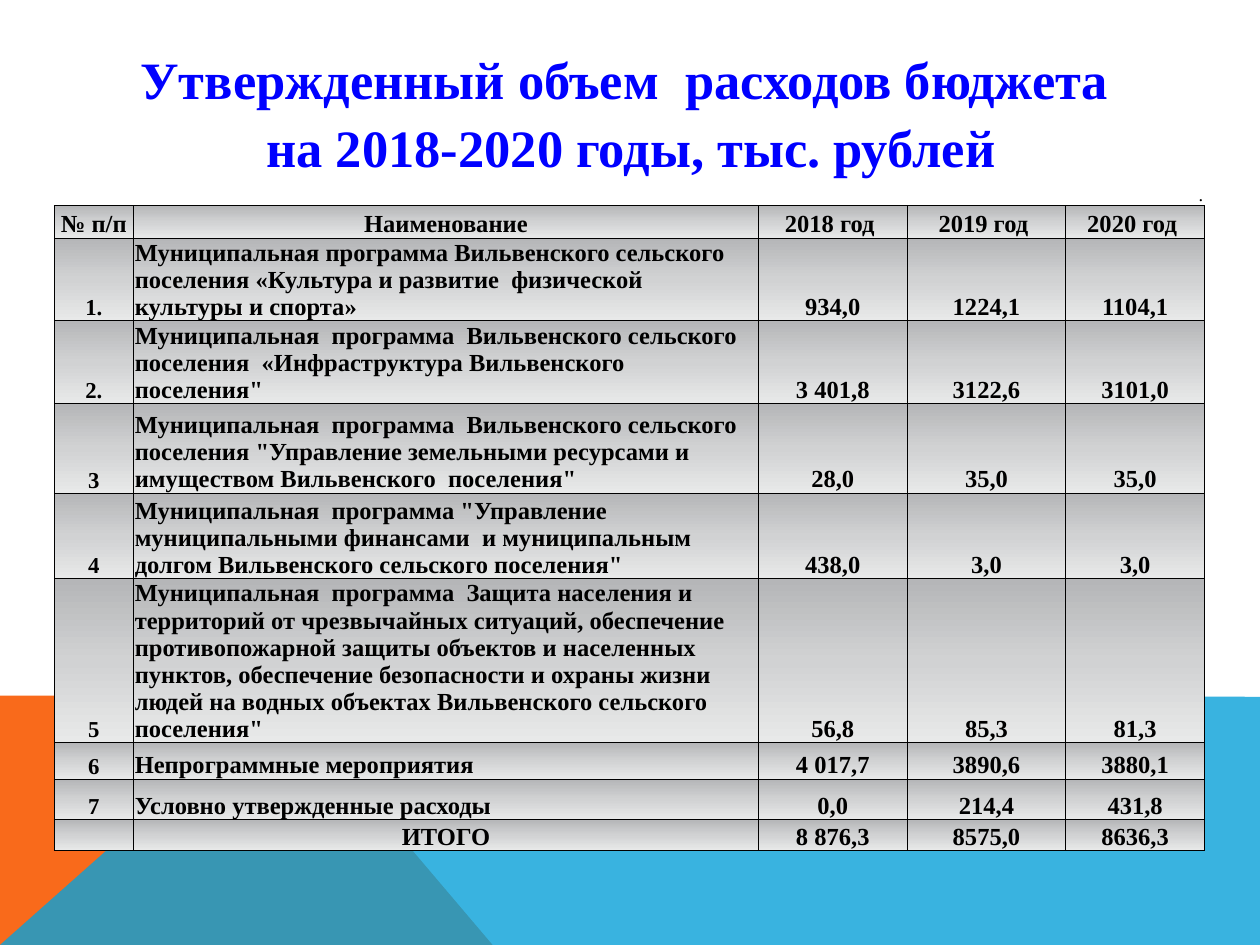
from dataclasses import dataclass

from lxml.etree import SubElement
from pptx import Presentation
from pptx.dml.color import RGBColor
from pptx.enum.text import MSO_ANCHOR, MSO_AUTO_SIZE, PP_ALIGN
from pptx.oxml.ns import qn
from pptx.util import Inches, Pt


@dataclass(frozen=True)
class Theme:
    font: str = "Times New Roman"
    title: str = "0000FF"
    ink: str = "000000"
    orange: str = "F96A1B"
    blue: str = "08A1D9"
    shading: tuple = ((0, "B5B6B8"), (50, "D1D2D3"), (100, "E8E9E9"))
    title_size: float = 30
    body_size: float = 14
    number_size: float = 13
    dot_size: float = 10.5
    border: float = 0.5


THEME = Theme()
COLUMN_WIDTHS = (0.63, 4.96, 1.18, 1.26, 1.1)
ROW_HEIGHTS = (0.17, 0.25, 0.65, 0.66, 0.71, 0.68, 1.3, 0.29, 0.32, 0.24)
HEADER = ("№ п/п", "Наименование", "2018 год ", "2019 год ", "2020 год ")
EXPENSES = (
    ("1.", "Муниципальная программа Вильвенского сельского поселения «Культура и развитие  "
     "физической культуры и спорта»", "934,0", "1224,1", "1104,1"),
    ("2.", "Муниципальная  программа  Вильвенского сельского поселения  «Инфраструктура "
     "Вильвенского  поселения\"", "3 401,8", "3122,6", "3101,0"),
    ("3", "Муниципальная  программа  Вильвенского сельского поселения \"Управление земельными "
     "ресурсами и имуществом Вильвенского  поселения\"", "28,0", "35,0", "35,0"),
    ("4", "Муниципальная  программа \"Управление муниципальными финансами  и муниципальным "
     "долгом Вильвенского сельского поселения\"", "438,0", "3,0", "3,0"),
    ("5", "Муниципальная  программа  Защита населения и территорий от чрезвычайных ситуаций, "
     "обеспечение противопожарной защиты объектов и населенных пунктов, обеспечение "
     "безопасности и охраны жизни людей на водных объектах Вильвенского сельского  поселения\"",
     "56,8", "85,3", "81,3"),
    ("6", "Непрограммные мероприятия", "4 017,7", "3890,6", "3880,1"),
    ("7", "Условно утвержденные расходы", "0,0", "214,4", "431,8"),
)
TOTAL = ("", "ИТОГО", "8 876,3", "8575,0", "8636,3")


def write_text(frame, text, size=THEME.body_size, color=THEME.ink, bold=True,
               align=PP_ALIGN.CENTER, spacing=None):
    frame.text = text
    for paragraph in frame.paragraphs:
        paragraph.alignment = align
        paragraph.line_spacing = spacing
        for run in paragraph.runs:
            run.font.name = THEME.font
            run.font.size = Pt(size)
            run.font.bold = bold
            run.font.color.rgb = RGBColor.from_string(color)
        if not text:
            paragraph._p.get_or_add_endParaRPr().set("sz", str(int(size * 100)))


def add_solid_color(parent, color):
    solid = SubElement(parent, qn("a:solidFill"))
    return SubElement(solid, qn("a:srgbClr"), val=color)


def add_band(slide, points, color, opacity=None):
    start, *corners = [(Inches(x), Inches(y)) for x, y in points]
    builder = slide.shapes.build_freeform(*start)
    builder.add_line_segments(corners, close=True)
    band = builder.convert_to_shape()
    band.shadow.inherit = False
    band.fill.solid()
    band.fill.fore_color.rgb = RGBColor.from_string(color)
    band.line.fill.background()
    if opacity:
        tint = band._element.spPr.find(qn("a:solidFill")).find(qn("a:srgbClr"))
        SubElement(tint, qn("a:alpha"), val=str(opacity * 1000))


def add_title(slide, text):
    title = slide.shapes.title
    title.left, title.top = Inches(0.51), Inches(0.44)
    title.width, title.height = Inches(9), Inches(0.87)
    frame = title.text_frame
    frame.word_wrap = True
    frame.auto_size = MSO_AUTO_SIZE.NONE
    frame.vertical_anchor = MSO_ANCHOR.MIDDLE
    write_text(frame, text, size=THEME.title_size, color=THEME.title, spacing=1.08)


def add_borders(cell, sides):
    properties = cell._tc.get_or_add_tcPr()
    for side in sides:
        line = SubElement(properties, qn(f"a:ln{side}"), w=str(Pt(THEME.border)))
        add_solid_color(line, THEME.ink)


def shade(cell):
    gradient = SubElement(cell._tc.get_or_add_tcPr(), qn("a:gradFill"), rotWithShape="1")
    stops = SubElement(gradient, qn("a:gsLst"))
    for position, color in THEME.shading:
        stop = SubElement(stops, qn("a:gs"), pos=str(position * 1000))
        SubElement(stop, qn("a:srgbClr"), val=color)
    SubElement(gradient, qn("a:lin"), ang="5400000", scaled="0")


def cell_format(row, column):
    if row == 0:
        return {"size": THEME.dot_size if column == 4 else 1, "bold": False,
                "align": PP_ALIGN.RIGHT}
    if row == 1:
        return {"spacing": 1.15 if column == 1 else None}
    if row <= 1 + len(EXPENSES):
        if column == 0:
            return {"size": THEME.number_size}
        if column == 1:
            return {"align": PP_ALIGN.LEFT}
    return {}


def add_budget_table(slide):
    rows = (("", "", "", "", "."), HEADER, *EXPENSES, TOTAL)
    table = slide.shapes.add_table(
        len(rows), len(COLUMN_WIDTHS), Inches(0.43), Inches(1.46),
        Inches(sum(COLUMN_WIDTHS)), Inches(sum(ROW_HEIGHTS))).table
    table.first_row = table.horz_banding = False
    for column, width in zip(table.columns, COLUMN_WIDTHS):
        column.width = Inches(width)
    for row, height in zip(table.rows, ROW_HEIGHTS):
        row.height = Inches(height)
    for r, values in enumerate(rows):
        for c, value in enumerate(values):
            cell = table.cell(r, c)
            cell.margin_left = cell.margin_right = cell.margin_top = Inches(0.01)
            cell.margin_bottom = 0
            cell.vertical_anchor = MSO_ANCHOR.BOTTOM
            write_text(cell.text_frame, value, **cell_format(r, c))
            if r == 0:
                add_borders(cell, "B")
                cell.fill.background()
            else:
                add_borders(cell, "LRTB")
                shade(cell)


def main():
    presentation = Presentation()
    presentation.slide_width, presentation.slide_height = Inches(10), Inches(7.5)
    slide = presentation.slides.add_slide(presentation.slide_layouts[5])
    add_band(slide, ((0, 7.5), (0, 5.52), (2.23, 5.52), (3.91, 7.5)), THEME.orange)
    add_band(slide, ((0, 7.5), (2.23, 5.52), (10, 5.53), (10, 7.5)), THEME.blue, opacity=80)
    add_title(slide, "Утвержденный объем  расходов бюджета \vна 2018-2020 годы, тыс. рублей")
    add_budget_table(slide)
    presentation.save("out.pptx")


if __name__ == "__main__":
    main()
